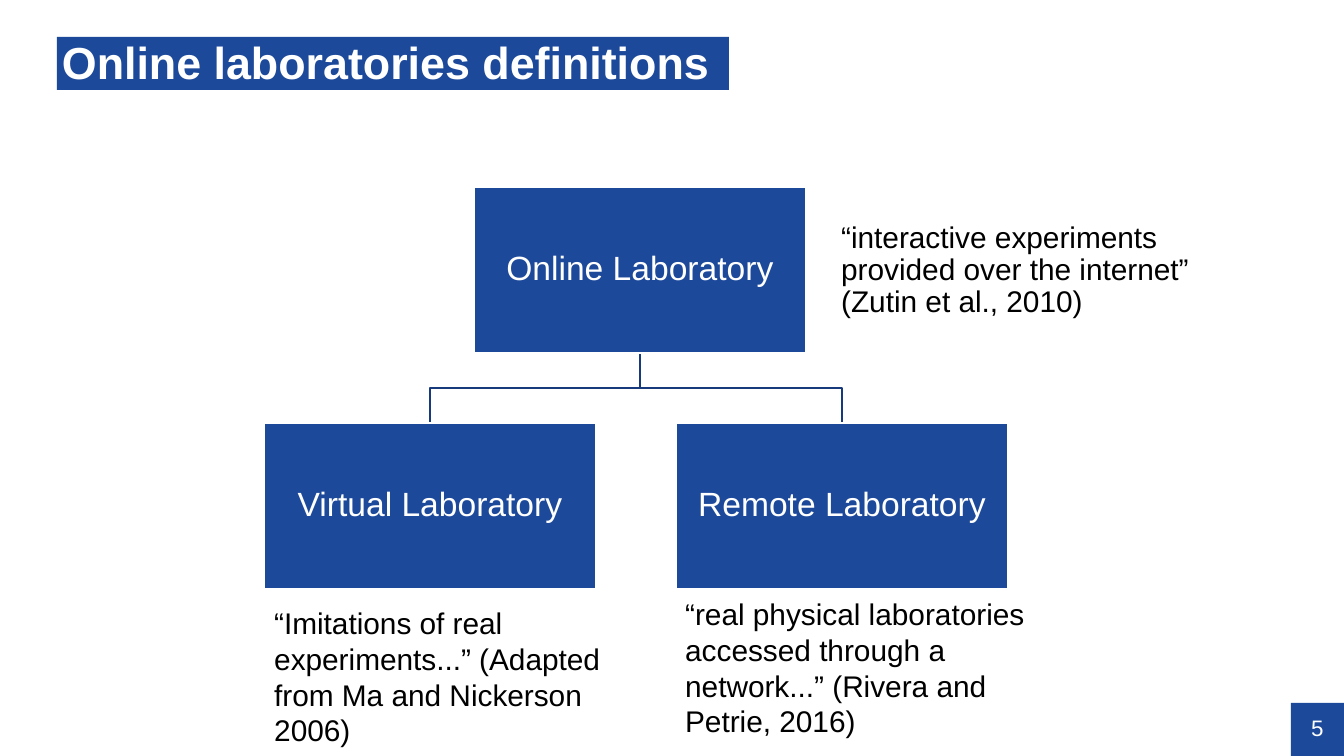
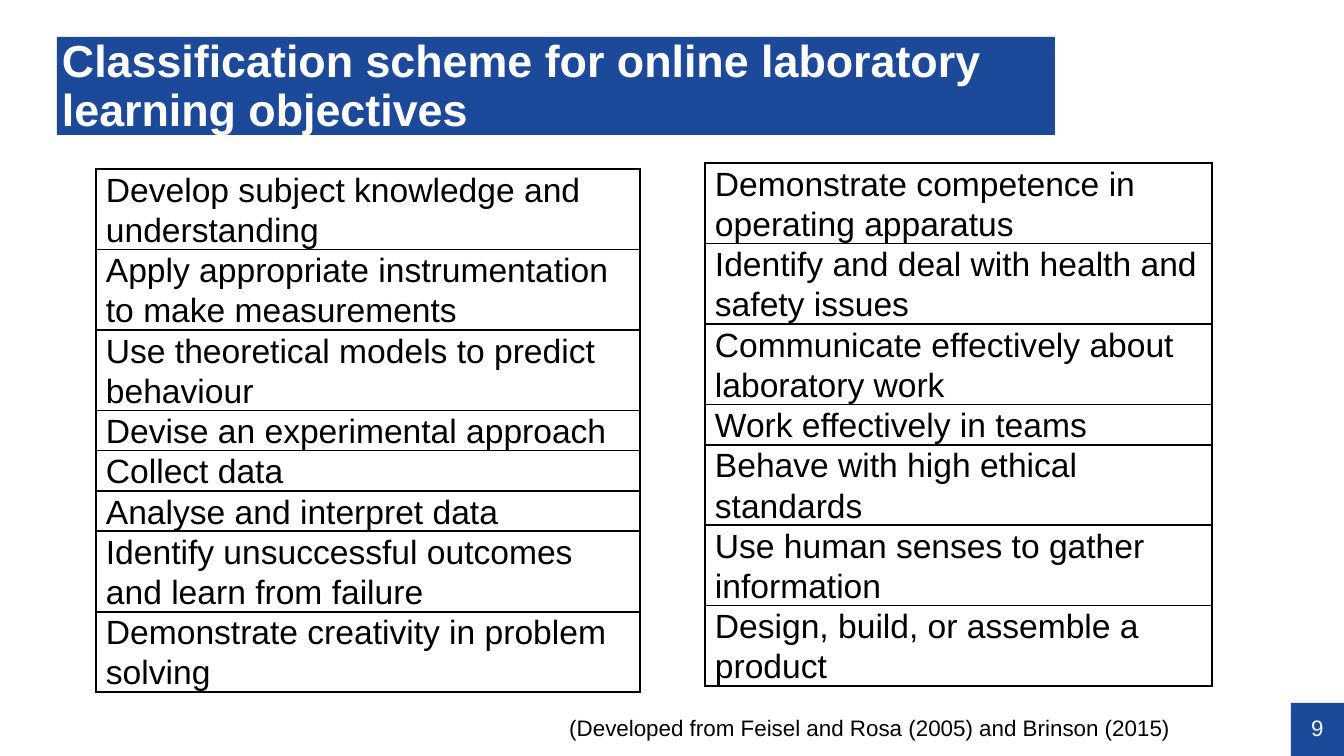
from lxml.etree import SubElement
from pptx import Presentation
from pptx.dml.color import RGBColor
from pptx.enum.shapes import MSO_SHAPE
from pptx.enum.text import MSO_ANCHOR, MSO_AUTO_SIZE, PP_ALIGN
from pptx.oxml.ns import qn
from pptx.util import Pt

WIDTH, HEIGHT = 1344, 756
SCALE = 9144000 / WIDTH  # EMU per px on a 10 inch wide slide


def px(n):
    return round(n * SCALE)


def color(hex_string):
    return RGBColor.from_string(hex_string)


class Deck:
    FONT = "Arial"
    BLUE, LINE, WHITE, BLACK = "1D499B", "173A7C", "FFFFFF", "000000"

    def __init__(self):
        self.prs = Presentation()
        self.prs.slide_width, self.prs.slide_height = px(WIDTH), px(HEIGHT)
        self.s = None

    def set_text(self, tf, text, size, ink, align=PP_ALIGN.LEFT, bold=False,
                 spacing=None, margins=None, anchor=MSO_ANCHOR.TOP, wrap=True):
        """Fill a text frame with one styled paragraph."""
        tf.word_wrap = wrap
        tf.vertical_anchor = anchor
        if margins:
            (tf.margin_left, tf.margin_top,
             tf.margin_right, tf.margin_bottom) = map(px, margins)
        p = tf.paragraphs[0]
        p.text = text
        p.alignment = align
        if spacing:
            p.line_spacing = spacing
        self.style(p, size, ink, bold)

    def style(self, p, size, ink, bold=False):
        p.font.name, p.font.size, p.font.bold = self.FONT, Pt(size), bold
        p.font.color.rgb = color(ink)

    def slide(self, title, width, height, number):
        """Start a slide with its title band and page number."""
        self.s = self.prs.slides.add_slide(self.prs.slide_layouts[5])
        sp = self.s.shapes.title
        sp.left, sp.top, sp.width, sp.height = map(px, (57, 37, width, height))
        sp.fill.solid()
        sp.fill.fore_color.rgb = color(self.BLUE)
        self.set_text(sp.text_frame, title, 24, self.WHITE, bold=True, spacing=0.9,
                      margins=(5, 3, 0, 0), anchor=MSO_ANCHOR.MIDDLE)
        sp.text_frame.auto_size = MSO_AUTO_SIZE.NONE
        self.box(str(number), WIDTH - 53, HEIGHT - 53, 53, 53, 12)

    def box(self, text, x, y, w, h, size, outline=None):
        sp = self.s.shapes.add_shape(MSO_SHAPE.RECTANGLE, *map(px, (x, y, w, h)))
        sp.shadow.inherit = False
        sp.fill.solid()
        sp.fill.fore_color.rgb = color(self.BLUE)
        if outline:
            sp.line.color.rgb = color(outline)
            sp.line.width = Pt(1)
        else:
            sp.line.fill.background()
        self.set_text(sp.text_frame, text, size, self.WHITE, PP_ALIGN.CENTER,
                      spacing=0.9, margins=(1, 1, 1, 1), anchor=MSO_ANCHOR.MIDDLE)

    def polyline(self, points):
        start, *rest = [(px(x), px(y)) for x, y in points]
        builder = self.s.shapes.build_freeform(*start)
        builder.add_line_segments(rest, close=False)
        sp = builder.convert_to_shape()
        sp.shadow.inherit = False
        sp.fill.background()
        sp.line.color.rgb = color(self.LINE)
        sp.line.width = Pt(1)

    def text(self, text, x, y, w, h, size, spacing=None, wrap=True):
        sp = self.s.shapes.add_textbox(*map(px, (x, y, w, h)))
        self.set_text(sp.text_frame, text, size, self.BLACK, spacing=spacing, wrap=wrap)

    def table(self, rows, x, y, w, row_height=32):
        """One-column table with a black grid and no fill."""
        frame = self.s.shapes.add_table(
            len(rows), 1, *map(px, (x, y, w, row_height * len(rows))))
        table = frame.table
        table.first_row = table.horz_banding = False
        for i, row in enumerate(rows):
            cell = table.cell(i, 0)
            cell.margin_left = cell.margin_right = px(10)
            cell.margin_top = cell.margin_bottom = 0
            p = cell.text_frame.paragraphs[0]
            p.text = row
            p.line_spacing, p.space_after = 1.07, Pt(8)
            self.style(p, 18, self.BLACK)
            self.borders(cell)
            cell.fill.background()

    def borders(self, cell):
        tc_pr = cell._tc.get_or_add_tcPr()
        for side in "LRTB":
            ln = SubElement(tc_pr, qn(f"a:ln{side}"), w=str(Pt(1)))
            fill = SubElement(ln, qn("a:solidFill"))
            SubElement(fill, qn("a:srgbClr"), val=self.BLACK)


def definitions(deck):
    deck.slide("Online laboratories definitions", 672, 53, 5)

    # Tree: one parent, two children
    w, h = 332, 166
    parent_x, parent_y, child_y = 474, 187, 423
    bottom = parent_y + h
    middle = (bottom + child_y) // 2
    stem = parent_x + w // 2
    children = [("Virtual Laboratory", 264), ("Remote Laboratory", 676)]
    for _, x in children:
        end = x + w // 2
        deck.polyline([(stem, bottom), (stem, middle), (end, middle), (end, child_y)])
    deck.box("Online Laboratory", parent_x, parent_y, w, h, 18, deck.WHITE)
    for name, x in children:
        deck.box(name, x, child_y, w, h, 18, deck.WHITE)

    # Quoted definitions
    deck.text("“interactive experiments provided over the internet” "
              "(Zutin et al., 2010)", 828, 216, 449, 112, 16, spacing=0.9)
    deck.text("“real physical laboratories accessed through a network...” "
              "(Rivera and Petrie, 2016)", 672, 589, 376, 159, 16)
    deck.text("“Imitations of real experiments...” "
              "(Adapted from Ma and Nickerson 2006)", 261, 598, 356, 159, 16)


def classification(deck):
    deck.slide("Classification scheme for online laboratory learning objectives",
               998, 98, 9)

    # Learning objectives
    deck.table(["Develop subject knowledge and understanding",
                "Apply appropriate instrumentation to make measurements",
                "Use theoretical models to predict behaviour",
                "Devise an experimental approach",
                "Collect data",
                "Analyse and interpret data",
                "Identify unsuccessful outcomes and learn from failure",
                "Demonstrate creativity in problem solving"], 96, 169, 544)
    deck.table(["Demonstrate competence in operating apparatus",
                "Identify and deal with health and safety issues",
                "Communicate effectively about laboratory work",
                "Work effectively in teams",
                "Behave with high ethical standards",
                "Use human senses to gather information",
                "Design, build, or assemble a product"], 705, 163, 507)

    # Source of the scheme
    deck.text("(Developed from Feisel and Rosa (2005) and Brinson (2015)",
              556, 708, 640, 40, 12, wrap=False)


def main():
    deck = Deck()
    definitions(deck)
    classification(deck)
    deck.prs.save("out.pptx")


if __name__ == "__main__":
    main()
